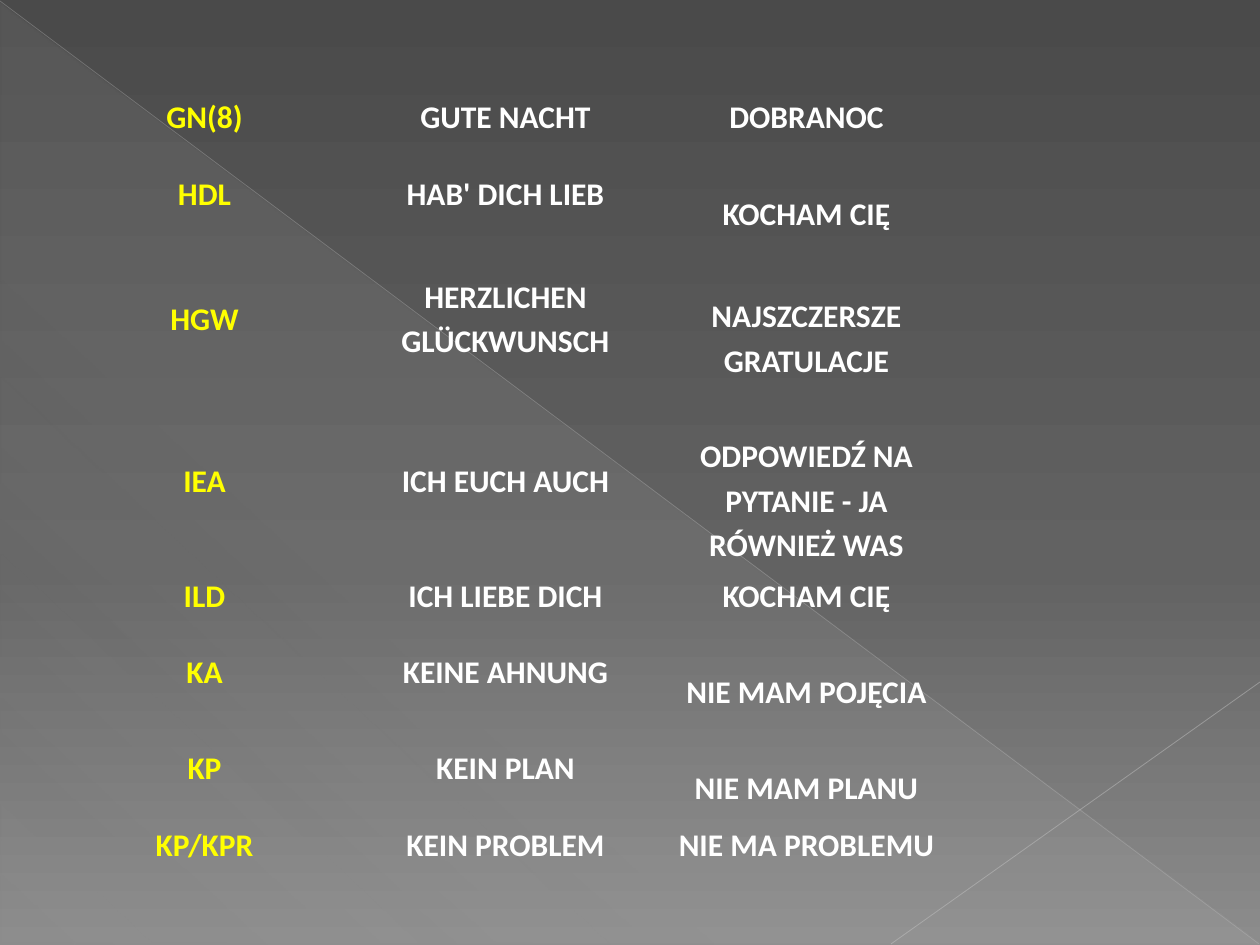
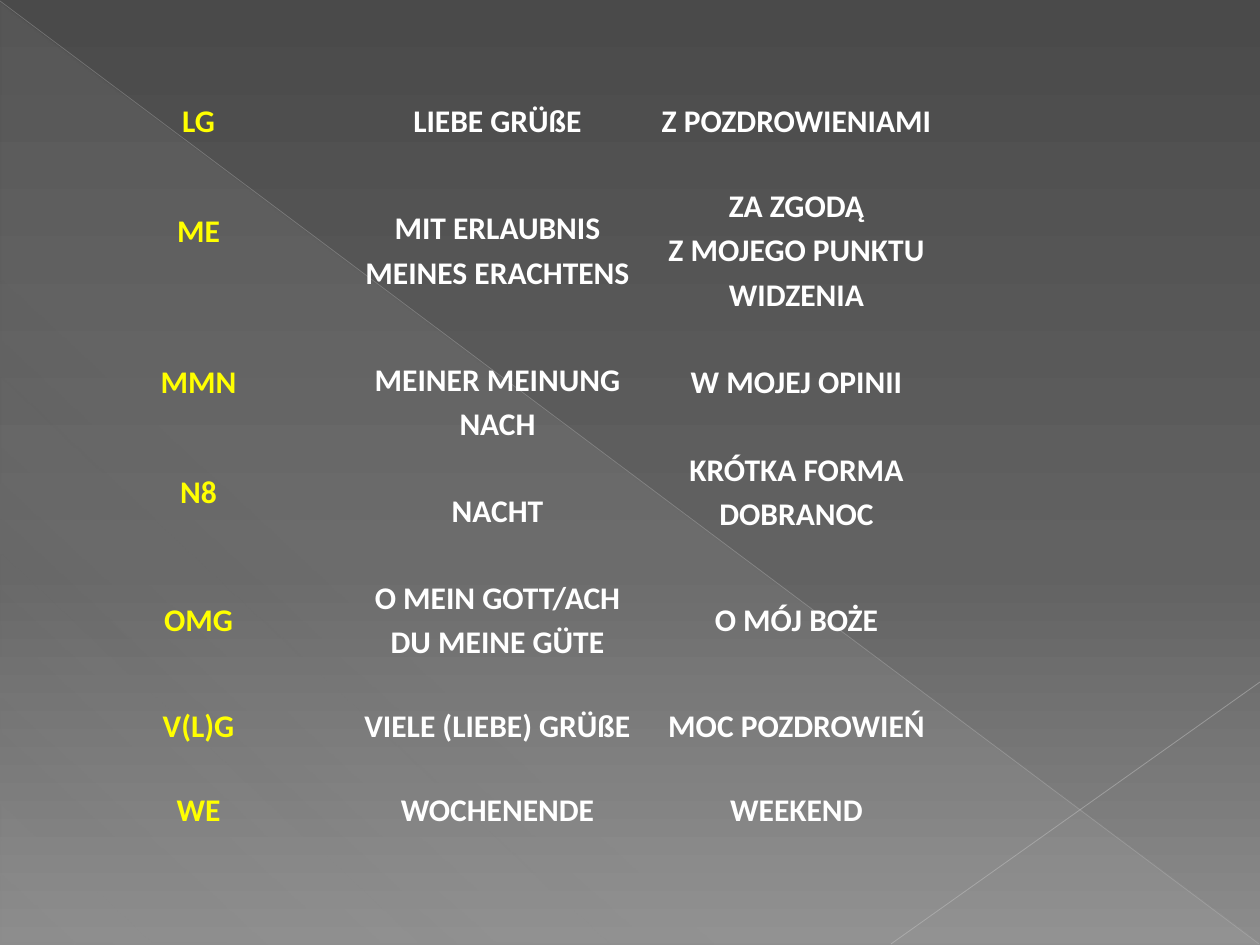
from lxml import etree
from pptx import Presentation
from pptx.dml.color import RGBColor
from pptx.enum.shapes import MSO_CONNECTOR, MSO_SHAPE
from pptx.enum.text import MSO_ANCHOR, PP_ALIGN
from pptx.oxml.ns import qn
from pptx.util import Pt

SCALE = 914400 / 126
WIDE, HIGH = 1260, 945
BLANK = 6
TRIANGLE = MSO_SHAPE.RIGHT_TRIANGLE
STRAIGHT = MSO_CONNECTOR.STRAIGHT
MIDDLE = MSO_ANCHOR.MIDDLE
CENTER = PP_ALIGN.CENTER
PLAIN = "{2D5ABB26-0587-4C30-8999-92F81FD0307C}"
DROP = 39
PAD = 6

COLORS = {
    "dark": "4A4A4A", "mid": "626262", "light": "8C8C8C", "veil": "D2D2D2",
    "long": "BFBFBF", "short": "C6C6C6", "code": "FFFF00", "text": "FFFFFF",
}
FONT = {"name": "Calibri", "size": Pt(18), "bold": True}
LINES = {"alignment": CENTER, "line_spacing": 1.15}
FLAGS = {"first_row": False, "horz_banding": False}

NIGHT = [
    (96, "111", "GN(8)", "GUTE NACHT", "DOBRANOC"),
    (98, "001", "HDL", "HAB' DICH LIEB", "KOCHAM CIĘ"),
    (152, "001", "HGW", "HERZLICHEN GLÜCKWUNSCH", "NAJSZCZERSZE GRATULACJE"),
    (172, "001", "IEA", "ICH EUCH AUCH", "ODPOWIEDŹ NA PYTANIE - JA RÓWNIEŻ WAS"),
    (57, "000", "ILD", "ICH LIEBE DICH", "KOCHAM CIĘ"),
    (96, "001", "KA", "KEINE AHNUNG", "NIE MAM POJĘCIA"),
    (96, "001", "KP", "KEIN PLAN", "NIE MAM PLANU"),
    (57, "000", "KP/KPR", "KEIN PROBLEM", "NIE MA PROBLEMU"),
]
GREET = [
    (88, "111", "LG", "LIEBE GRÜßE", "Z POZDROWIENIAMI"),
    (167, "011", "ME", "MIT ERLAUBNIS\nMEINES ERACHTENS",
     "ZA ZGODĄ\nZ MOJEGO PUNKTU WIDZENIA"),
    (131, "010", "MMN", "MEINER MEINUNG NACH", "W MOJEJ OPINII"),
    (85, "010", "N8", "NACHT", "KRÓTKA FORMA DOBRANOC"),
    (129, "111", "OMG", "O MEIN GOTT/ACH DU MEINE GÜTE", "O MÓJ BOŻE"),
    (82, "111", "V(L)G", "VIELE (LIEBE) GRÜßE", "MOC POZDROWIEŃ"),
    (39, ""),
    (43, "000", "WE", "WOCHENENDE", "WEEKEND"),
]


def px(size):
    return round(size * SCALE)


def apply(target, values):
    for key, value in values.items():
        setattr(target, key, value)


def fade(color, alpha):
    etree.SubElement(color, qn("a:alpha"), val=str(alpha * 1000))


def blend(fill, node, stops, angle):
    fill.gradient()
    grad = node.find(".//" + qn("a:gradFill"))
    ramp = grad.find(qn("a:gsLst"))
    for stop in list(ramp):
        ramp.remove(stop)
    for place, name, alpha in stops:
        stop = etree.SubElement(ramp, qn("a:gs"), pos=str(place * 1000))
        color = etree.SubElement(stop, qn("a:srgbClr"), val=COLORS[name])
        if alpha < 100:
            fade(color, alpha)
    grad.find(qn("a:lin")).set("ang", str(angle * 60000))


def add_veil(slide):
    shape = slide.shapes.add_shape(TRIANGLE, px(1), px(3), px(1259), px(942))
    shape.shadow.inherit = False
    shape.line.fill.background()
    stops = [(0, "veil", 10), (70, "veil", 8), (100, "veil", 1)]
    blend(shape.fill, shape.element, stops, 133)


def add_line(slide, ends, name, width, alpha):
    line = slide.shapes.add_connector(STRAIGHT, *map(px, ends))
    line.line.color.rgb = RGBColor.from_string(COLORS[name])
    line.line.width = Pt(width)
    fade(line.element.find(".//" + qn("a:ln")).find(".//" + qn("a:srgbClr")), alpha)
    etree.SubElement(line.element.spPr, qn("a:effectLst"))


def add_base(deck):
    slide = deck.slides.add_slide(deck.slide_layouts[BLANK])
    stops = [(0, "dark", 100), (60, "mid", 100), (100, "light", 100)]
    blend(slide.background.fill, slide.element, stops, 90)
    add_veil(slide)
    add_line(slide, (0, 1, 1259, 944), "long", 0.39, 35)
    add_line(slide, (1260, 682, 891, 944), "short", 0.47, 45)
    return slide


def write(cell, text, name):
    cell.text_frame.text = text
    for para in cell.text_frame.paragraphs:
        apply(para, LINES)
        for run in para.runs:
            apply(run.font, FONT)
            run.font.color.rgb = RGBColor.from_string(COLORS[name])


def add_terms(slide, left, top, cols, rows):
    sizes = px(left), px(top), px(sum(cols)), px(sum(row[0] for row in rows))
    frame = slide.shapes.add_table(len(rows), len(cols), *sizes)
    table = frame.table
    apply(table, FLAGS)
    frame.element.find(".//" + qn("a:tableStyleId")).text = PLAIN
    for col, width in zip(table.columns, cols):
        col.width = px(width)
    inset = {"vertical_anchor": MIDDLE, "margin_left": px(PAD),
             "margin_right": px(PAD), "margin_top": 0, "margin_bottom": 0}
    for cell in table.iter_cells():
        apply(cell, inset)
        cell.fill.background()
    for r, (height, drops, *texts) in enumerate(rows):
        table.rows[r].height = px(height)
        for c, (drop, text) in enumerate(zip(drops, texts)):
            cell = table.cell(r, c)
            cell.margin_top = px(DROP * int(drop))
            write(cell, text, "text" if c else "code")
    return table


def main():
    deck = Presentation()
    deck.slide_width, deck.slide_height = px(WIDE), px(HIGH)
    add_terms(add_base(deck), 54, 47, [301] * 4, NIGHT)
    table = add_terms(add_base(deck), 49, 55, [299] * 4 + [14], GREET)
    last = len(GREET) - 1
    table.cell(last, 3).merge(table.cell(last, 4))
    deck.save("out.pptx")


if __name__ == "__main__":
    main()
